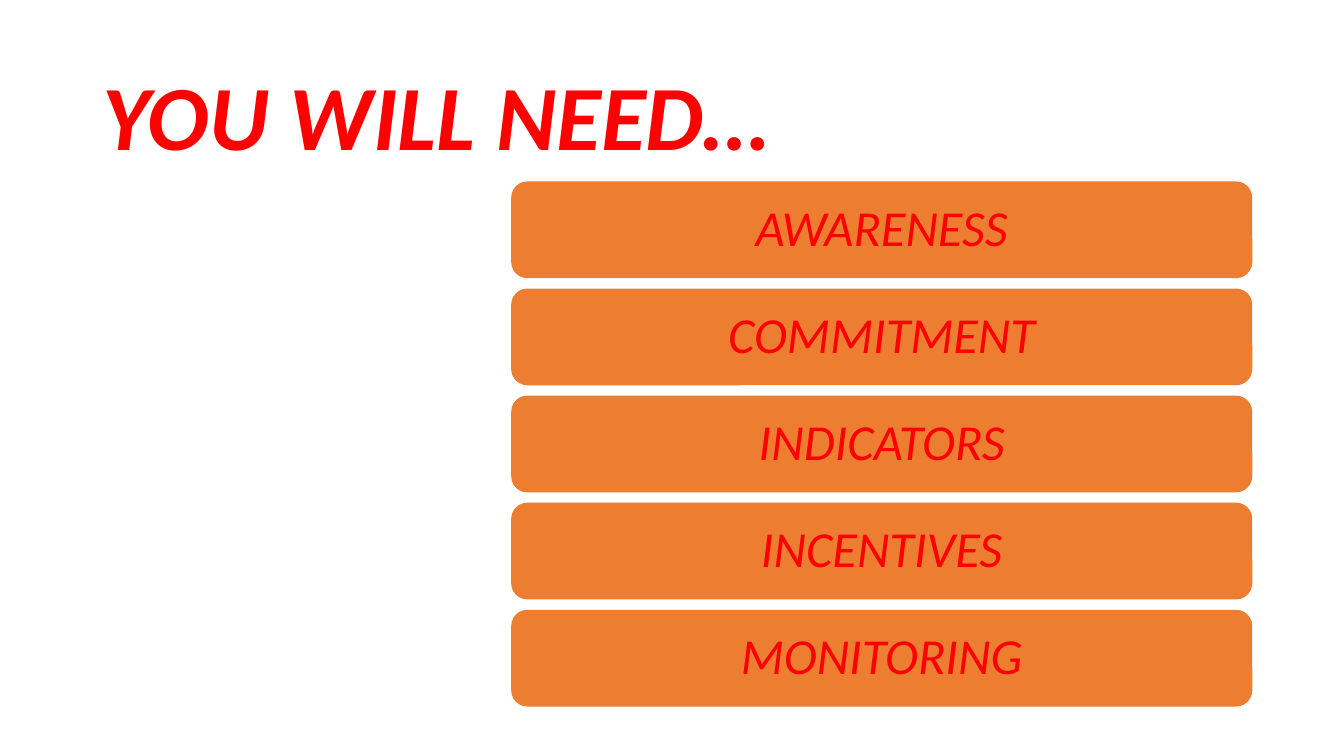
from pptx import Presentation
from pptx.dml.color import RGBColor
from pptx.enum.shapes import MSO_SHAPE
from pptx.enum.text import MSO_ANCHOR, PP_ALIGN
from pptx.util import Inches, Pt

COLORS = {"text": "FF0000", "bar": "ED7D31"}
NEEDS = ["AWARENESS", "COMMITMENT", "INDICATORS", "INCENTIVES", "MONITORING"]
FIRST_TOP, LAST_TOP = 1.8, 6.05
PITCH = (LAST_TOP - FIRST_TOP) / (len(NEEDS) - 1)


def add_line(tf, text, size, bold=False):
    tf.word_wrap = True
    tf.vertical_anchor = MSO_ANCHOR.MIDDLE
    p = tf.paragraphs[0]
    p.line_spacing = 0.9
    r = p.add_run()
    r.text = text
    r.font.name = "Calibri"
    r.font.size = Pt(size)
    r.font.bold = bold
    r.font.italic = True
    r.font.color.rgb = RGBColor.from_string(COLORS["text"])
    return p, r


prs = Presentation()
prs.slide_width = Inches(13.33)
prs.slide_height = Inches(7.5)
s = prs.slides.add_slide(prs.slide_layouts[6])

title = s.shapes.add_textbox(Inches(0.92), Inches(0.45), Inches(11.5), Inches(1.34))
p, r = add_line(title.text_frame, "you will need…", 82, bold=True)
p.alignment = PP_ALIGN.LEFT
r.font._element.set("cap", "small")

for i, need in enumerate(NEEDS):
    sp = s.shapes.add_shape(MSO_SHAPE.ROUNDED_RECTANGLE, Inches(5.07),
                            Inches(FIRST_TOP + i * PITCH), Inches(7.35), Inches(0.96))
    sp.shadow.inherit = False
    sp.fill.solid()
    sp.fill.fore_color.rgb = RGBColor.from_string(COLORS["bar"])
    sp.line.fill.background()
    p, r = add_line(sp.text_frame, need, 36)
    p.alignment = PP_ALIGN.CENTER

prs.save("out.pptx")
